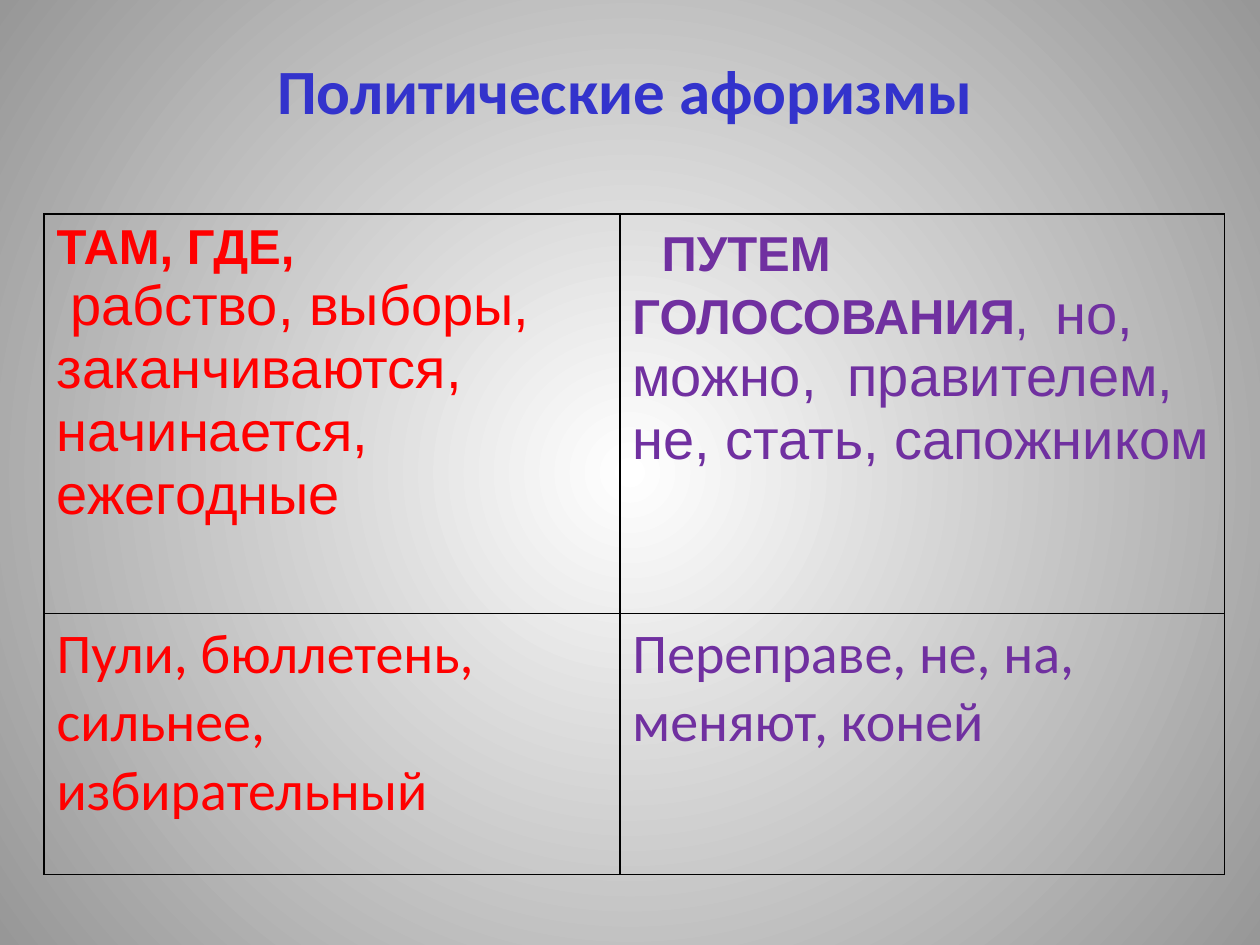
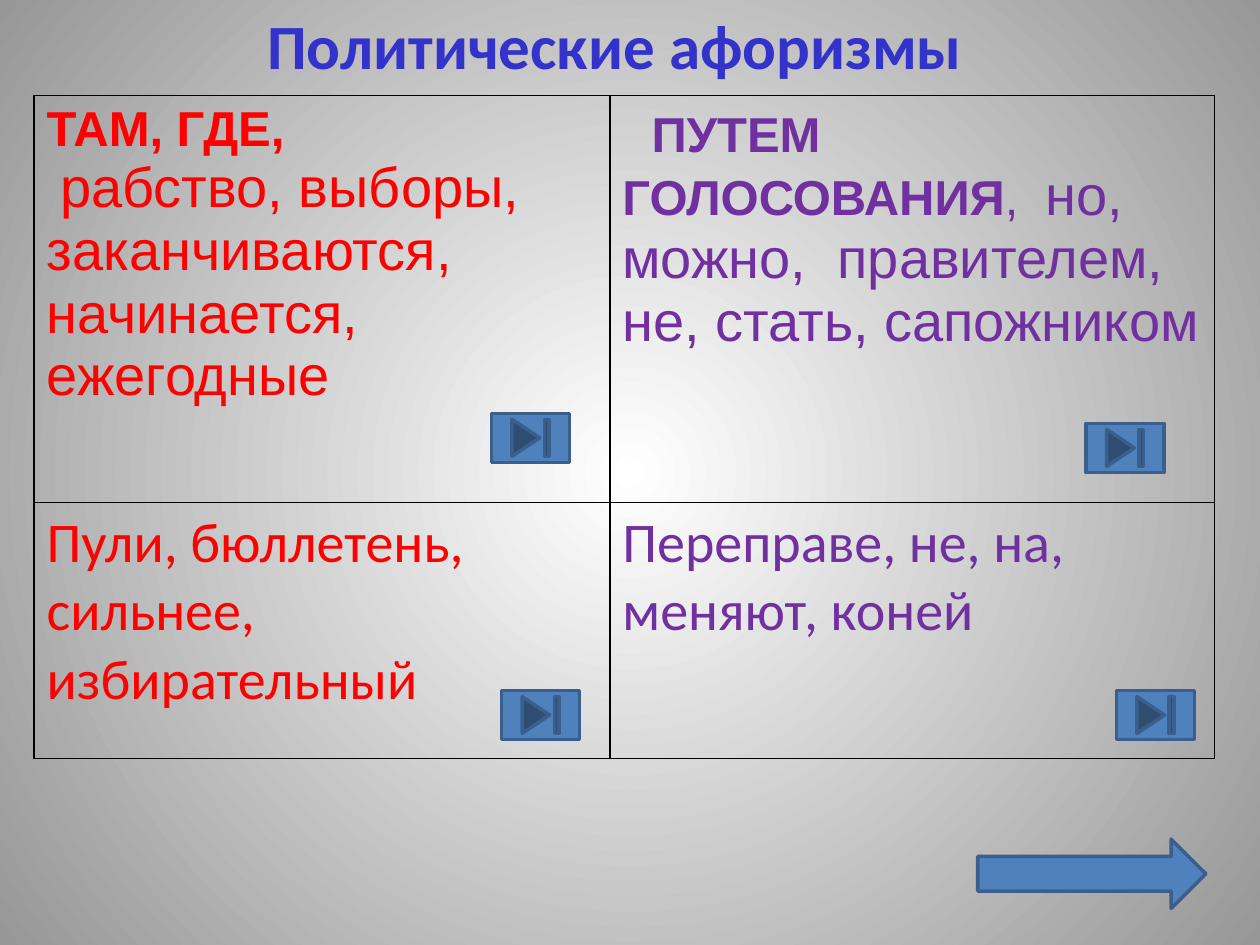
"""Build two slides of political aphorisms to unscramble."""
import pptx
import pptx.dml.color
import pptx.enum.shapes
import pptx.enum.text
import pptx.oxml
import pptx.oxml.ns
import pptx.util

Inches = pptx.util.Inches
Pt = pptx.util.Pt
SHAPE = pptx.enum.shapes.MSO_SHAPE
NS = pptx.oxml.ns.nsdecls("a")
HUES = {"title": "3333CC", "red": "FF0000", "plum": "7030A0", "rule": "000000",
        "glow": "FFFFFF", "edge": "979797", "fill": "4F81BD", "line": "3A5F8C"}
HEAD = {"name": "Calibri", "size": Pt(36), "bold": True}
LEAD = {"name": "Arial", "size": Pt(28), "bold": True}
LIGHT = {"name": "Arial", "size": Pt(28), "bold": False}
BODY = {"name": "Arial", "size": Pt(32), "bold": False}
PLAIN = {"name": "Calibri", "size": Pt(32), "bold": False}
TITLE = "Политические афоризмы"
WIDTHS = [4.57, 4.8]
CELLS = [
    [("red", [[("ТАМ, ГДЕ,", LEAD)],
              [(" ", LEAD),
               ("рабство, выборы, заканчиваются, начинается, ежегодные", BODY)]]),
     ("plum", [[(" ", LIGHT), (" ", BODY | {"bold": True}),
                ("ПУТЕМ ГОЛОСОВАНИЯ", LEAD), (",  ", LIGHT),
                ("но, можно,  правителем, не, стать, сапожником", BODY)]])],
    [("red", [[("Пули, бюллетень, сильнее, избирательный", PLAIN)]]),
     ("plum", [[("Переправе, не, на, меняют, коней", PLAIN)]])],
]
END = (SHAPE.ACTION_BUTTON_END, 0.62, 0.39)
NEXT = (SHAPE.RIGHT_ARROW, 1.81, 0.55)
SLIDES = [
    {"title": (1.14, 0.36), "grid": (0.35, 1.7), "rows": [3.17, 2.07], "keys": []},
    {"title": (1.06, 0), "grid": (0.27, 0.76), "rows": [3.23, 2.03],
     "keys": [(END, 3.9, 3.28), (END, 8.62, 3.36), (END, 3.98, 5.48),
              (END, 8.86, 5.48), (NEXT, 7.76, 6.66)]},
]


def tint(name):
    return pptx.dml.color.RGBColor.from_string(HUES[name])


def write(frame, hue, paras):
    for i, runs in enumerate(paras):
        para = frame.add_paragraph() if i else frame.paragraphs[0]
        for text, form in runs:
            run = para.add_run()
            run.text = text
            run.font.color.rgb = tint(hue)
            for key, value in form.items():
                setattr(run.font, key, value)


deck = pptx.Presentation()
deck.slide_width = Inches(10)
deck.slide_height = Inches(7.5)

for plan in SLIDES:
    slide = deck.slides.add_slide(deck.slide_layouts[6])

    back = slide.background.fill
    back.gradient()
    for stop, hue in zip(back.gradient_stops, ("glow", "edge")):
        stop.color.rgb = tint(hue)
    grad = slide.element.xpath(".//p:bgPr/a:gradFill")[0]
    for lin in grad.xpath("a:lin"):
        grad.remove(lin)
    grad.append(pptx.oxml.parse_xml(
        f'<a:path {NS} path="circle"><a:fillToRect l="50000" t="50000" '
        'r="50000" b="50000"/></a:path>'))

    left, top = plan["title"]
    box = slide.shapes.add_textbox(Inches(left), Inches(top), Inches(7.64), Inches(0.71))
    box.text_frame.word_wrap = True
    write(box.text_frame, "title", [[(TITLE, HEAD)]])
    box.text_frame.paragraphs[0].alignment = pptx.enum.text.PP_ALIGN.CENTER

    left, top = plan["grid"]
    table = slide.shapes.add_table(
        2, 2, Inches(left), Inches(top),
        Inches(sum(WIDTHS)), Inches(sum(plan["rows"]))).table
    table.first_row = table.horz_banding = False
    for col, width in zip(table.columns, WIDTHS):
        col.width = Inches(width)
    for r, (row, height) in enumerate(zip(CELLS, plan["rows"])):
        table.rows[r].height = Inches(height)
        for c, (hue, paras) in enumerate(row):
            cell = table.cell(r, c)
            write(cell.text_frame, hue, paras)
            cell.fill.background()
            props = cell._tc.get_or_add_tcPr()
            for i, side in enumerate("LRTB"):
                props.insert(i, pptx.oxml.parse_xml(
                    f'<a:ln{side} {NS} w="12700"><a:solidFill><a:srgbClr '
                    f'val="{HUES["rule"]}"/></a:solidFill></a:ln{side}>'))

    for (kind, width, height), left, top in plan["keys"]:
        key = slide.shapes.add_shape(
            kind, Inches(left), Inches(top), Inches(width), Inches(height))
        key.shadow.inherit = False
        key.fill.solid()
        key.fill.fore_color.rgb = tint("fill")
        key.line.color.rgb = tint("line")
        key.line.width = Pt(2)

deck.save("out.pptx")
